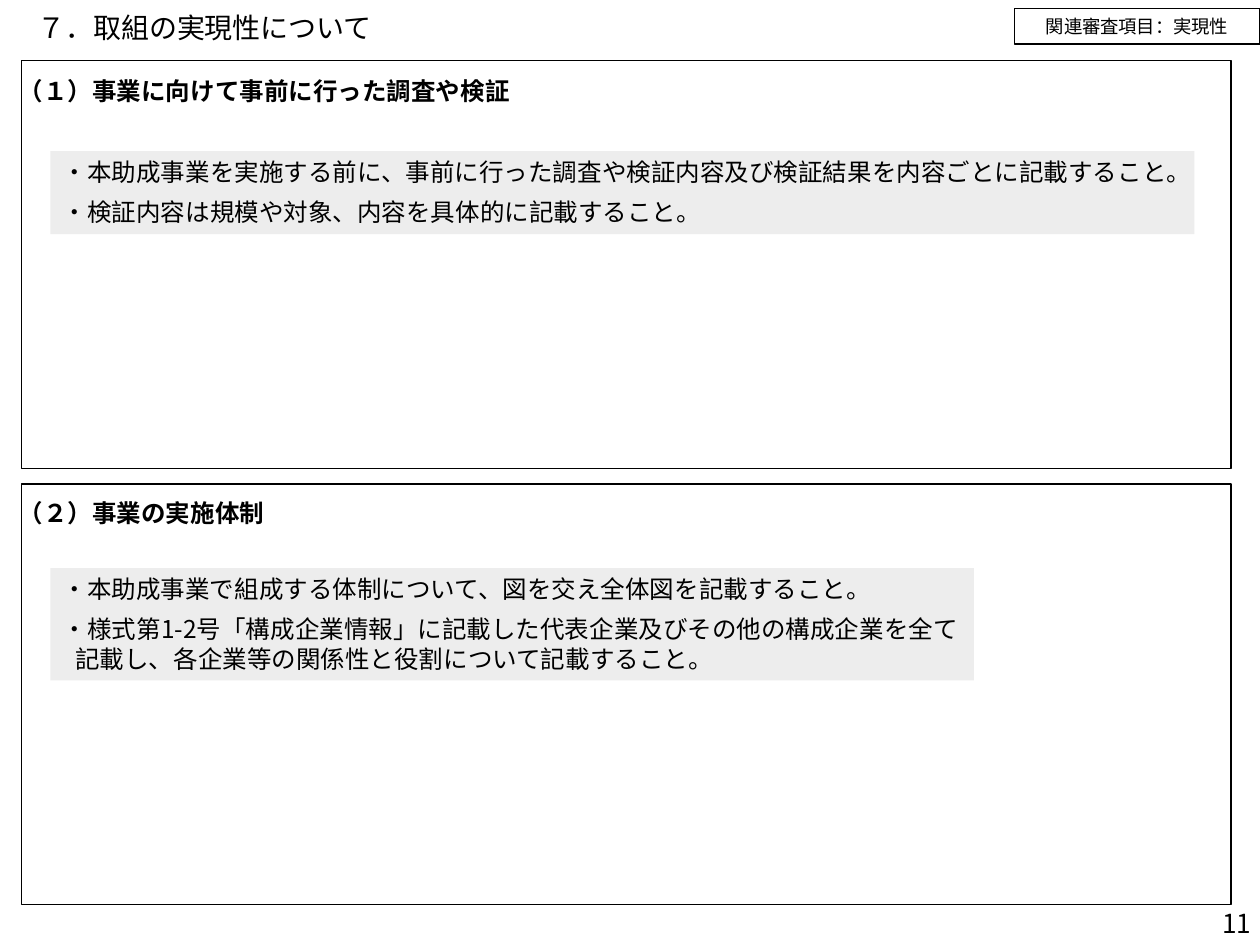
from dataclasses import dataclass

from lxml.etree import SubElement
from pptx import Presentation
from pptx.dml.color import RGBColor
from pptx.enum.shapes import MSO_SHAPE as SHAPE
from pptx.enum.text import MSO_ANCHOR as ANCHOR, PP_ALIGN as ALIGN
from pptx.oxml.ns import qn
from pptx.util import Inches, Pt

FONT = "Noto Sans CJK JP"
BLACK = "000000"
GRAY = "EDEDED"


@dataclass
class Box:
    left: float
    top: float
    width: float
    height: float

    def lengths(self) -> list:
        return [Inches(v) for v in (self.left, self.top, self.width, self.height)]


@dataclass
class Section:
    heading: str
    heading_top: float
    frame: Box
    guide: Box
    notes: list[str]
    hanging: bool = False


def rgb(value: str) -> RGBColor:
    return RGBColor.from_string(value)


def write(sp, lines: list[str], size: float, bold: bool = False,
          align=ALIGN.LEFT, anchor=ANCHOR.TOP, spacing: float = 1.2) -> None:
    tf = sp.text_frame
    tf.word_wrap = True
    tf.vertical_anchor = anchor
    tf.text = "\n".join(lines)
    for i, p in enumerate(tf.paragraphs):
        p.alignment = align
        p.line_spacing = Pt(size * spacing)
        p.space_before = Pt(6 if i else 0)
        p.font.size = Pt(size)
        p.font.bold = bold
        p.font.color.rgb = rgb(BLACK)
        p.font.name = FONT
        SubElement(p._p.pPr.find(qn("a:defRPr")), qn("a:ea"), typeface=FONT)


def add_text(s, box: Box, text: str, size: float, **style):
    sp = s.shapes.add_textbox(*box.lengths())
    write(sp, [text], size, **style)
    return sp


def add_rect(s, box: Box, fill: str = "", line: float = 0):
    sp = s.shapes.add_shape(SHAPE.RECTANGLE, *box.lengths())
    sp.shadow.inherit = False
    if fill:
        sp.fill.solid()
        sp.fill.fore_color.rgb = rgb(fill)
    else:
        sp.fill.background()
    if line:
        sp.line.color.rgb = rgb(BLACK)
        sp.line.width = Pt(line)
    else:
        sp.line.fill.background()
    return sp


def add_section(s, section: Section) -> None:
    guide = add_rect(s, section.guide, fill=GRAY)
    write(guide, section.notes, 14)
    if section.hanging:
        pPr = guide.text_frame.paragraphs[-1]._p.pPr
        pPr.set("marL", str(Inches(0.1)))
        pPr.set("indent", str(Inches(-0.1)))
    add_text(s, Box(0.05, section.heading_top, 6.31, 0.35), section.heading, 14, bold=True)
    add_rect(s, section.frame, line=1)


SECTIONS = [
    Section("（１）事業に向けて事前に行った調査や検証", 0.55,
            Box(0.17, 0.48, 9.6, 3.24), Box(0.4, 1.2, 9.08, 0.66),
            ["・本助成事業を実施する前に、事前に行った調査や検証内容及び検証結果を内容ごとに記載すること。",
             "・検証内容は規模や対象、内容を具体的に記載すること。"]),
    Section("（２）事業の実施体制", 3.9,
            Box(0.17, 3.84, 9.6, 3.34), Box(0.4, 4.51, 7.33, 0.89),
            ["・本助成事業で組成する体制について、図を交え全体図を記載すること。",
             "・様式第1-2号「構成企業情報」に記載した代表企業及びその他の構成企業を全て記載し、"
             "各企業等の関係性と役割について記載すること。"],
            hanging=True),
]


def main() -> None:
    prs = Presentation()
    prs.slide_width, prs.slide_height = Inches(10), Inches(7.5)
    s = prs.slides.add_slide(prs.slide_layouts[6])

    number = add_text(s, Box(8.25, 7.25, 1.75, 0.15), "11", 15,
                      align=ALIGN.RIGHT, anchor=ANCHOR.MIDDLE)
    number.text_frame.margin_right = Inches(0.07)
    add_text(s, Box(0.2, 0.05, 9.44, 0.36), "７．取組の実現性について", 16,
             anchor=ANCHOR.MIDDLE, spacing=1.1)
    for section in SECTIONS:
        add_section(s, section)
    tag = add_rect(s, Box(8.05, 0.07, 1.95, 0.28), line=0.75)
    write(tag, ["関連審査項目：実現性"], 10.5, align=ALIGN.CENTER)

    prs.save("out.pptx")


if __name__ == "__main__":
    main()
